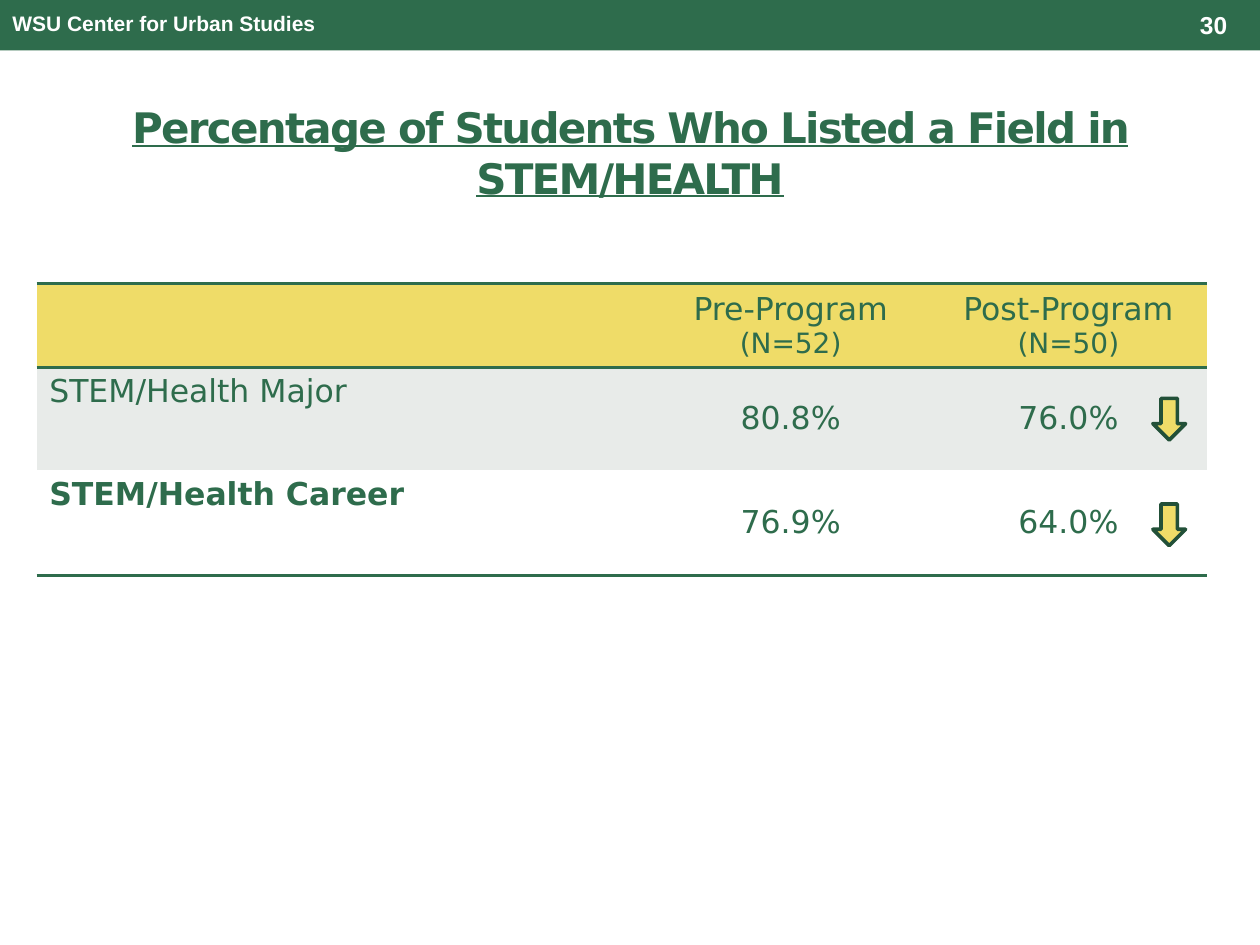
from lxml import etree
from pptx import Presentation
from pptx import util as u
from pptx.dml.color import RGBColor
from pptx.enum import shapes, text
from pptx.oxml.ns import qn

COLORS = {
    "green": "2E6C4C",
    "dark_green": "225038",
    "yellow": "EFDC68",
    "grey": "E8EBE9",
    "white": "FFFFFF",
}
CENTER = text.PP_ALIGN.CENTER
MIDDLE = text.MSO_ANCHOR.MIDDLE


def format_text(paragraph, size, font="DejaVu Sans", color="green", bold=False, align=None):
    paragraph.alignment = align
    for run in paragraph.runs:
        run.font.size = u.Pt(size)
        run.font.name = font
        run.font.bold = bold
        run.font.color.rgb = RGBColor.from_string(COLORS[color])


def add_border(cell, side):
    properties = cell._tc.get_or_add_tcPr()
    border = etree.Element(qn(f"a:{side}"), w=str(u.Pt(2)))
    fill = etree.SubElement(border, qn("a:solidFill"))
    etree.SubElement(fill, qn("a:srgbClr"), val=COLORS["green"])
    borders = [child for child in properties if child.tag == qn("a:lnT")]
    properties.insert(len(borders), border)


prs = Presentation()
prs.slide_width = u.Cm(25.4)
prs.slide_height = u.Cm(19.05)
slide = prs.slides.add_slide(prs.slide_layouts[6])

banner = slide.shapes.add_shape(shapes.MSO_SHAPE.RECTANGLE, 0, 0, prs.slide_width, u.Cm(1.02))
banner.shadow.inherit = False
banner.fill.solid()
banner.fill.fore_color.rgb = RGBColor.from_string(COLORS["green"])
banner.line.fill.background()

title = slide.shapes.add_textbox(u.Cm(1.27), u.Cm(1.7), u.Cm(22.86), u.Cm(2.74))
title.text_frame.word_wrap = True
title.text_frame.vertical_anchor = MIDDLE
heading = title.text_frame.paragraphs[0]
heading.text = "Percentage of Students Who Listed a Field in STEM/HEALTH"
format_text(heading, 24, bold=True, align=CENTER)
heading.runs[0].font.underline = True
heading.runs[0].font._element.set("spc", "-100")

rows = [
    ["", "Pre-Program\n(N=52)", "Post-Program\n(N=50)"],
    ["STEM/Health Major", "80.8%", "76.0%"],
    ["STEM/Health Career", "76.9%", "64.0%"],
]
row_fills = ["yellow", "grey", "white"]
row_borders = [["lnT", "lnB"], [], ["lnB"]]

results_frame = slide.shapes.add_table(3, 3, u.Cm(0.74), u.Cm(5.71), u.Cm(23.6), u.Cm(5.85))
results = results_frame.table
results.first_row = False
results.horz_banding = False
style_id = next(results_frame._element.iter(qn("a:tableStyleId")))
style_id.text = "{2D5ABB26-0587-4C30-8999-92F81FD0307C}"
for column, width in zip(results.columns, [12.4, 5.6, 5.6]):
    column.width = u.Cm(width)
for row, height in zip(results.rows, [1.65, 2.08, 2.11]):
    row.height = u.Cm(height)

for r, values in enumerate(rows):
    for c, value in enumerate(values):
        cell = results.cell(r, c)
        cell.fill.solid()
        cell.fill.fore_color.rgb = RGBColor.from_string(COLORS[row_fills[r]])
        for side in row_borders[r]:
            add_border(cell, side)
        cell.text_frame.text = value
        if c > 0:
            cell.vertical_anchor = MIDDLE
        for line, paragraph in enumerate(cell.text_frame.paragraphs):
            format_text(paragraph, 16 if line else 18, bold=(r == 2 and c == 0),
                        align=CENTER if c else None)

page_number = slide.shapes.add_textbox(u.Cm(22.02), u.Cm(0.05), u.Cm(2.97), u.Cm(0.91))
page_number.text_frame.word_wrap = True
page_number.text_frame.vertical_anchor = MIDDLE
page_number.text_frame.text = "30"
format_text(page_number.text_frame.paragraphs[0], 14, "Arial", "white", True, text.PP_ALIGN.RIGHT)

center_name = slide.shapes.add_textbox(0, u.Cm(0.08), u.Cm(6.78), u.Cm(0.76))
center_name.text_frame.word_wrap = True
center_name.text_frame.text = "WSU Center for Urban Studies"
format_text(center_name.text_frame.paragraphs[0], 12, "Arial", "white", True)

for top in [8.03, 10.16]:
    decline = slide.shapes.add_shape(
        shapes.MSO_SHAPE.UP_ARROW, u.Cm(23.24), u.Cm(top), u.Cm(0.66), u.Cm(0.84))
    decline.rotation = 180
    decline.shadow.inherit = False
    decline.fill.solid()
    decline.fill.fore_color.rgb = RGBColor.from_string(COLORS["yellow"])
    decline.line.color.rgb = RGBColor.from_string(COLORS["dark_green"])
    decline.line.width = u.Pt(2.08)

prs.save("out.pptx")
